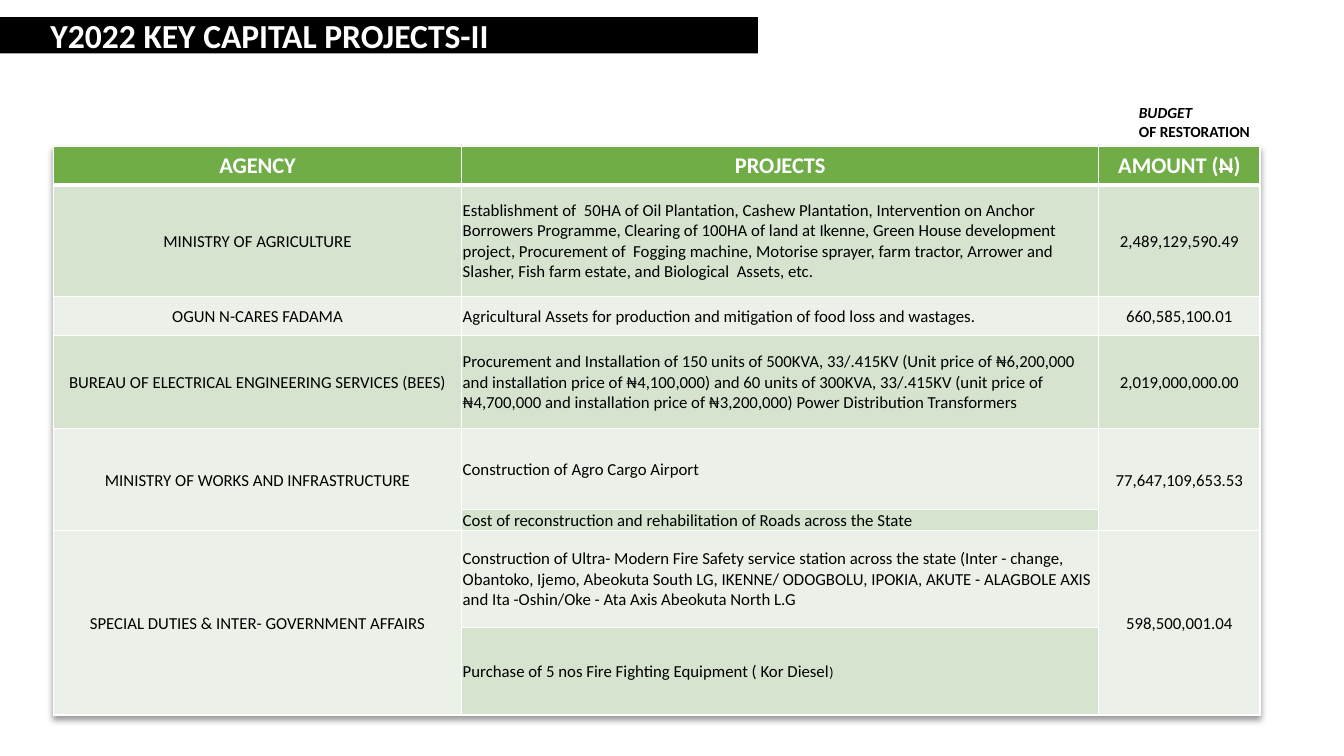
from lxml import etree
from pptx import Presentation
from pptx.dml.color import RGBColor
from pptx.enum.shapes import MSO_SHAPE
from pptx.enum.text import MSO_ANCHOR, PP_ALIGN
from pptx.oxml import parse_xml
from pptx.util import Pt

ROUND_RECT = MSO_SHAPE.ROUNDED_RECTANGLE
MIDDLE = MSO_ANCHOR.MIDDLE
LEFT, CENTER = PP_ALIGN.LEFT, PP_ALIGN.CENTER

BLACK = RGBColor(0x00, 0x00, 0x00)
WHITE = RGBColor(0xFF, 0xFF, 0xFF)
GREEN = RGBColor(0x70, 0xAD, 0x47)
BANDS = [RGBColor(0xEB, 0xF1, 0xE9), RGBColor(0xD5, 0xE3, 0xCF)]

A_NS = "http://schemas.openxmlformats.org/drawingml/2006/main"
TITLE = {"size": Pt(24), "bold": True, "color": WHITE}
NOTE = {"size": Pt(11), "bold": True, "color": BLACK}
HEADER = {"size": Pt(16), "bold": True, "color": WHITE}
BODY = {"size": Pt(12), "bold": False, "color": BLACK}
CELL = {"margin_left": Pt(0.72), "margin_top": Pt(0.72), "margin_right": Pt(0.72),
        "margin_bottom": 0, "vertical_anchor": MIDDLE}

COLUMN_WIDTHS = [291.6, 455, 115.2]
COLUMN_ALIGNS = [CENTER, LEFT, CENTER]
ROW_HEIGHTS = [27.4, 79.9, 27.4, 67, 57.6, 14.4, 69.1, 62.6]
SPLIT_ROWS = [4, 6]
ROWS = [
    ["AGENCY", "PROJECTS", "AMOUNT ("],
    ["MINISTRY OF AGRICULTURE",
     "Establishment of  50HA of Oil Plantation, Cashew Plantation, Intervention on Anchor "
     "Borrowers Programme, Clearing of 100HA of land at Ikenne, Green House development "
     "project, Procurement of  Fogging machine, Motorise sprayer, farm tractor, Arrower and "
     "Slasher, Fish farm estate, and Biological  Assets, etc.",
     "2,489,129,590.49"],
    ["OGUN N-CARES FADAMA",
     "Agricultural Assets for production and mitigation of food loss and wastages.",
     "660,585,100.01"],
    ["BUREAU OF ELECTRICAL ENGINEERING SERVICES (BEES)",
     "Procurement and Installation of 150 units of 500KVA, 33/.415KV (Unit price of ₦6,200,000 "
     "and installation price of ₦4,100,000) and 60 units of 300KVA, 33/.415KV (unit price of "
     "₦4,700,000 and installation price of ₦3,200,000) Power Distribution Transformers",
     "2,019,000,000.00"],
    ["MINISTRY OF WORKS AND INFRASTRUCTURE", "Construction of Agro Cargo Airport",
     "77,647,109,653.53"],
    ["", "Cost of reconstruction and rehabilitation of Roads across the State", ""],
    ["SPECIAL DUTIES & INTER- GOVERNMENT AFFAIRS",
     "Construction of Ultra- Modern Fire Safety service station across the state (Inter - change, "
     "Obantoko, Ijemo, Abeokuta South LG, IKENNE/ ODOGBOLU, IPOKIA, AKUTE - ALAGBOLE AXIS "
     "and Ita -Oshin/Oke - Ata Axis Abeokuta North L.G",
     "598,500,001.04"],
    ["", "Purchase of 5 nos Fire Fighting Equipment ( Kor Diesel", ""],
]


def add_run(p, text, fmt):
    """Add a Calibri run with the given format and return it."""
    r = p.add_run()
    r.text = text
    r.font.name = "Calibri"
    for key, value in fmt.items():
        if key == "color":
            r.font.color.rgb = value
        else:
            setattr(r.font, key, value)
    return r


def add_borders(cell, bottom):
    """Draw white borders round a cell, with its own bottom width."""
    tc_pr = cell._tc.get_or_add_tcPr()
    for side, width in {"L": 1, "R": 1, "T": 1, "B": bottom}.items():
        ln = etree.SubElement(tc_pr, f"{{{A_NS}}}ln{side}", w=str(Pt(width)))
        fill = etree.SubElement(ln, f"{{{A_NS}}}solidFill")
        etree.SubElement(fill, f"{{{A_NS}}}srgbClr", val=str(WHITE))


def add_title(s, x, y, w, h):
    """Draw the black title bar."""
    sp = s.shapes.add_shape(ROUND_RECT, Pt(x), Pt(y), Pt(w), Pt(h))
    sp.adjustments[0] = 0
    sp.shadow.inherit = False
    sp.fill.solid()
    sp.fill.fore_color.rgb = BLACK
    sp.line.fill.background()
    tf = sp.text_frame
    tf.word_wrap = True
    tf.vertical_anchor = MIDDLE
    tf.margin_left = Pt(36)
    p = tf.paragraphs[0]
    p.alignment = LEFT
    add_run(p, "Y2022 KEY CAPITAL PROJECTS-II", TITLE)


def add_note(s, x, y, w, h):
    """Write the budget name over the amount column."""
    tf = s.shapes.add_textbox(Pt(x), Pt(y), Pt(w), Pt(h)).text_frame
    tf.word_wrap = True
    add_run(tf.paragraphs[0], "BUDGET", NOTE | {"italic": True})
    add_run(tf.add_paragraph(), "OF RESTORATION", NOTE)


def add_projects(s, x, y, w, h):
    """Build the table of agencies, projects and amounts."""
    table = s.shapes.add_table(len(ROWS), len(COLUMN_WIDTHS), Pt(x), Pt(y), Pt(w), Pt(h)).table
    table._tbl.tblPr.insert(0, parse_xml(
        f'<a:effectLst xmlns:a="{A_NS}"><a:outerShdw blurRad="50800" dist="38100" dir="5400000">'
        '<a:srgbClr val="000000"><a:alpha val="40000"/></a:srgbClr></a:outerShdw></a:effectLst>'))
    for column, width in zip(table.columns, COLUMN_WIDTHS):
        column.width = Pt(width)
    for i, (row, height) in enumerate(zip(ROWS, ROW_HEIGHTS)):
        table.rows[i].height = Pt(height)
        for j, text in enumerate(row):
            cell = table.cell(i, j)
            for key, value in CELL.items():
                setattr(cell, key, value)
            add_borders(cell, 1 if i else 3)
            cell.fill.solid()
            cell.fill.fore_color.rgb = BANDS[i % 2] if i else GREEN
            p = cell.text_frame.paragraphs[0]
            p.alignment = COLUMN_ALIGNS[j] if i else CENTER
            if text:
                add_run(p, text, BODY if i else HEADER)
    for i in SPLIT_ROWS:
        for j in (0, 2):
            table.cell(i, j).merge(table.cell(i + 1, j))
    p = table.cell(0, 2).text_frame.paragraphs[0]
    add_run(p, "N", HEADER)._r.get_or_add_rPr().set("strike", "sngStrike")
    add_run(p, ")", HEADER)
    p = table.cell(len(ROWS) - 1, 1).text_frame.paragraphs[0]
    add_run(p, ")", BODY | {"size": Pt(10)})


def main():
    """Build the slide and save it."""
    prs = Presentation()
    prs.slide_width, prs.slide_height = Pt(960), Pt(540)
    s = prs.slides.add_slide(prs.slide_layouts[6])
    add_note(s, 806.4, 70.4, 105.8, 34.6)
    add_projects(s, 38.2, 104.7, sum(COLUMN_WIDTHS), sum(ROW_HEIGHTS))
    add_title(s, 0, 12.2, 541.4, 25.9)
    prs.save("out.pptx")


if __name__ == "__main__":
    main()
